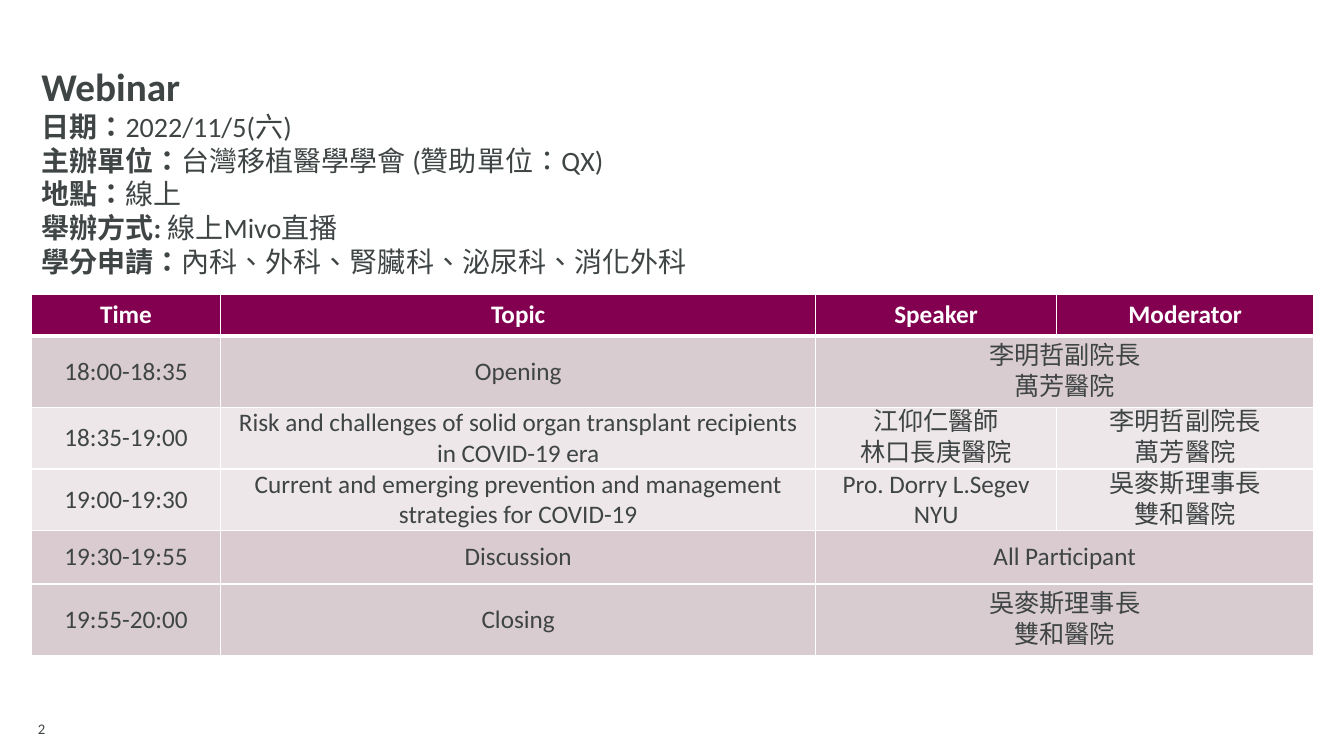
"""Build the webinar agenda slide with its event details and programme table."""
from lxml import etree
from pptx import Presentation
from pptx.dml.color import RGBColor
from pptx.enum.lang import MSO_LANGUAGE_ID
from pptx.enum.text import MSO_ANCHOR, MSO_AUTO_SIZE, PP_ALIGN
from pptx.oxml.ns import qn
from pptx.util import Inches, Pt

CENTER, LEFT, RIGHT = PP_ALIGN.CENTER, PP_ALIGN.LEFT, PP_ALIGN.RIGHT
MIDDLE, TOP, BOTTOM = MSO_ANCHOR.MIDDLE, MSO_ANCHOR.TOP, MSO_ANCHOR.BOTTOM
GROW = MSO_AUTO_SIZE.SHAPE_TO_FIT_TEXT
CHINESE = MSO_LANGUAGE_ID.TRADITIONAL_CHINESE
INK, WHITE, PLUM = "3F4444", "FFFFFF", "830051"
ROSE, DUSK, PALE = "D9CCD0", "D9CBD0", "EDE7E9"


def rgb(value):
    return RGBColor.from_string(value)


def style(font, size, color, bold=None):
    font.name, font.size, font.bold = "Calibri", Pt(size), bold
    font.color.rgb = rgb(color)


details = [
    ("日期：", "2022/11/5(六)"),
    ("主辦單位：", "台灣移植醫學學會 (贊助單位：QX)"),
    ("地點：", "線上"),
    ("舉辦方式: ", "線上Mivo直播"),
    ("學分申請：", "內科、外科、腎臟科、泌尿科、消化外科"),
]
programme = [
    (0.41, PLUM, ["Time", "Topic", "Speaker", "Moderator"]),
    (0.71, ROSE, ["18:00-18:35", "Opening", "李明哲副院長\n萬芳醫院"]),
    (0.61, PALE, ["18:35-19:00",
                  "Risk and challenges of solid organ transplant recipients in COVID-19 era",
                  "江仰仁醫師\n林口長庚醫院", "李明哲副院長\n萬芳醫院"]),
    (0.61, PALE, ["19:00-19:30",
                  "Current and emerging prevention and management strategies for COVID-19",
                  "Pro. Dorry L.Segev\nNYU", "吳麥斯理事長\n雙和醫院"]),
    (0.53, DUSK, ["19:30-19:55", "Discussion", "All Participant"]),
    (0.71, ROSE, ["19:55-20:00", "Closing", "吳麥斯理事長\n雙和醫院"]),
]
column_widths = [1.88, 5.9, 2.39, 2.55]

prs = Presentation()
prs.slide_width, prs.slide_height = Inches(13.33), Inches(7.5)
slide = prs.slides.add_slide(prs.slide_layouts[5])

page_number = slide.shapes.add_textbox(Inches(0), Inches(7.06), Inches(0.45), Inches(0.34))
page_frame = page_number.text_frame
page_frame.word_wrap, page_frame.vertical_anchor = True, BOTTOM
page_frame.margin_left = page_frame.margin_top = page_frame.margin_right = 0
page_frame.margin_bottom = Inches(0.08)
page_line = page_frame.paragraphs[0]
page_line.text, page_line.alignment = "2", RIGHT
style(page_line.font, 10.5, INK)

agenda = slide.shapes.add_table(len(programme), len(column_widths), Inches(0.31), Inches(2.92),
                                Inches(sum(column_widths)),
                                Inches(sum(height for height, _, _ in programme))).table
for column, width in zip(agenda.columns, column_widths):
    column.width = Inches(width)
for row, (height, fill, entries) in enumerate(programme):
    agenda.rows[row].height = Inches(height)
    header, session = row == 0, fill == PALE
    if len(entries) == 3:
        agenda.cell(row, 2).merge(agenda.cell(row, 3))
    for col in range(len(column_widths)):
        cell = agenda.cell(row, col)
        cell.fill.solid()
        cell.fill.fore_color.rgb = rgb(fill)
        if cell.is_spanned:
            continue
        cell.text, cell.vertical_anchor = entries[col], MIDDLE
        if header:
            rule = etree.Element(qn("a:lnB"), w=str(Pt(3)))
            rule_fill = etree.SubElement(rule, qn("a:solidFill"))
            etree.SubElement(rule_fill, qn("a:srgbClr"), val=WHITE)
            cell._tc.get_or_add_tcPr().insert(0, rule)
        if session and col > 0:
            cell.margin_top = cell.margin_bottom = 0
            cell.margin_left = cell.margin_right = Inches(0.07)
        for line in cell.text_frame.paragraphs:
            line.alignment = CENTER
            if not header and (col > 1 or session and col == 1):
                line.line_spacing = Pt(22)
            style(line.font, 18, WHITE if header else INK, header)

event = slide.shapes.title
event.left, event.top, event.width, event.height = map(Inches, (0.31, 0.57, 9.18, 2.26))
event_frame = event.text_frame
event_frame.word_wrap, event_frame.auto_size = True, GROW
event_frame.vertical_anchor = TOP
heading = event_frame.paragraphs[0]
heading.text, heading.alignment = "Webinar", LEFT
style(heading.font, 28, INK, True)
for label, value in details:
    line = event_frame.add_paragraph()
    line.alignment = LEFT
    for text, bold in ((label, True), (value, False)):
        run = line.add_run()
        run.text = text
        run.font.language_id = CHINESE
        style(run.font, 20, INK, bold)

prs.save("out.pptx")
